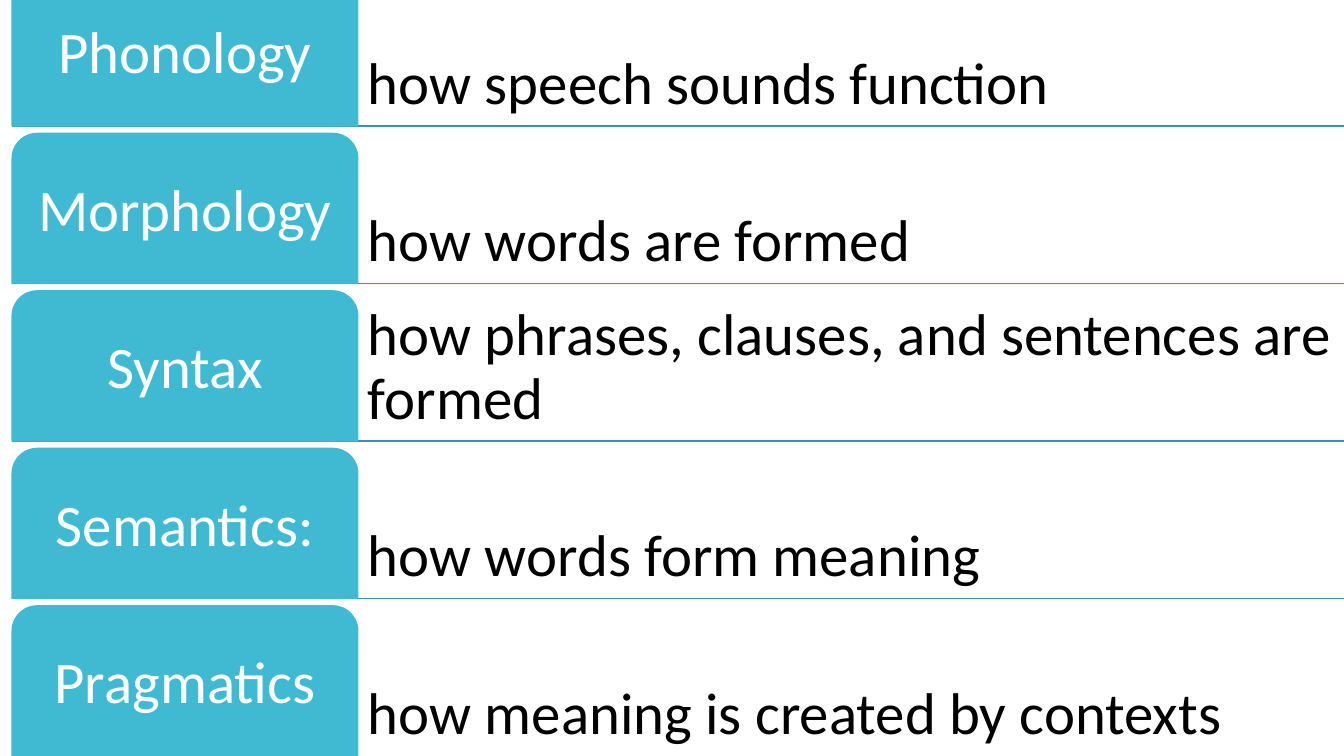
from dataclasses import dataclass

from lxml import etree
from pptx import Presentation
from pptx import util as u
from pptx.dml.color import RGBColor
from pptx.enum import shapes, text
from pptx.oxml import ns


@dataclass(frozen=True)
class Theme:
    font: str = "Calibri"
    size: float = 42
    line_width: float = 0.85
    tab: RGBColor = RGBColor.from_string("40BAD2")
    rule: RGBColor = RGBColor.from_string("3395A8")
    tab_text: RGBColor = RGBColor.from_string("FFFFFF")
    body_text: RGBColor = RGBColor.from_string("000000")


THEME = Theme()
PAGE_WIDTH, PAGE_HEIGHT = 13.33, 7.5
LIST_LEFT, LIST_TOP = 0.12, -0.24
ROW_HEIGHT = 1.49
TAB_WIDTH = 3.43
TAB_GAP = 0.01
INSET = 0.09

BRANCHES = [
    ("Phonology", "how speech sounds function"),
    ("Morphology", "how words are formed"),
    ("Syntax", "how phrases, clauses, and sentences are formed"),
    ("Semantics:", "how words form meaning"),
    ("Pragmatics", "how meaning is created by contexts"),
]


def write_text(shape, words, *, color, align, anchor):
    frame = shape.text_frame
    frame.word_wrap = True
    frame.vertical_anchor = anchor
    frame.margin_left = frame.margin_right = u.Inches(INSET)
    frame.margin_top = frame.margin_bottom = u.Inches(INSET)
    para = frame.paragraphs[0]
    para.alignment = align
    para.line_spacing = 0.9
    para.space_after = u.Pt(0.35 * THEME.size)
    span = para.add_run()
    span.text = words
    span.font.name = THEME.font
    span.font.size = u.Pt(THEME.size)
    span.font.color.rgb = color


def add_rule(page, left, right, y):
    rule = page.shapes.add_connector(
        shapes.MSO_CONNECTOR.STRAIGHT,
        u.Inches(left), u.Inches(y), u.Inches(right), u.Inches(y))
    rule.line.color.rgb = THEME.rule
    rule.line.width = u.Pt(THEME.line_width)
    etree.SubElement(rule._element.spPr, ns.qn("a:effectLst"))


def add_tab(page, name, left, top, width, height):
    tab = page.shapes.add_shape(
        shapes.MSO_SHAPE.ROUND_2_SAME_RECTANGLE,
        u.Inches(left), u.Inches(top), u.Inches(width), u.Inches(height))
    tab.shadow.inherit = False
    tab.adjustments[0] = 0.167
    tab.adjustments[1] = 0
    tab.fill.solid()
    tab.fill.fore_color.rgb = THEME.tab
    tab.line.color.rgb = THEME.tab
    tab.line.width = u.Pt(THEME.line_width)
    write_text(tab, name, color=THEME.tab_text,
               align=text.PP_ALIGN.CENTER, anchor=text.MSO_ANCHOR.MIDDLE)


def add_branch(page, name, meaning, left, top, width, height, ruled):
    """Place one row: a tab, its meaning and, if ruled, the line beneath."""
    if ruled:
        add_rule(page, left, left + width, top + height)
    meaning_left = left + TAB_WIDTH + TAB_GAP
    box = page.shapes.add_textbox(
        u.Inches(meaning_left), u.Inches(top),
        u.Inches(left + width - meaning_left), u.Inches(height))
    write_text(box, meaning, color=THEME.body_text,
               align=text.PP_ALIGN.LEFT, anchor=text.MSO_ANCHOR.BOTTOM)
    add_tab(page, name, left, top, TAB_WIDTH, height)


def add_branch_list(page, left, top, width, height):
    last = len(BRANCHES) - 1
    pitch = (height - ROW_HEIGHT) / last
    for index, (name, meaning) in enumerate(BRANCHES):
        add_branch(page, name, meaning, left, top + index * pitch,
                   width, ROW_HEIGHT, ruled=index < last)


def main():
    deck = Presentation()
    deck.slide_width = u.Inches(PAGE_WIDTH)
    deck.slide_height = u.Inches(PAGE_HEIGHT)
    page = deck.slides.add_slide(deck.slide_layouts[6])
    add_branch_list(page, LIST_LEFT, LIST_TOP,
                    PAGE_WIDTH - LIST_LEFT, PAGE_HEIGHT - LIST_TOP)
    deck.save("out.pptx")


if __name__ == "__main__":
    main()
